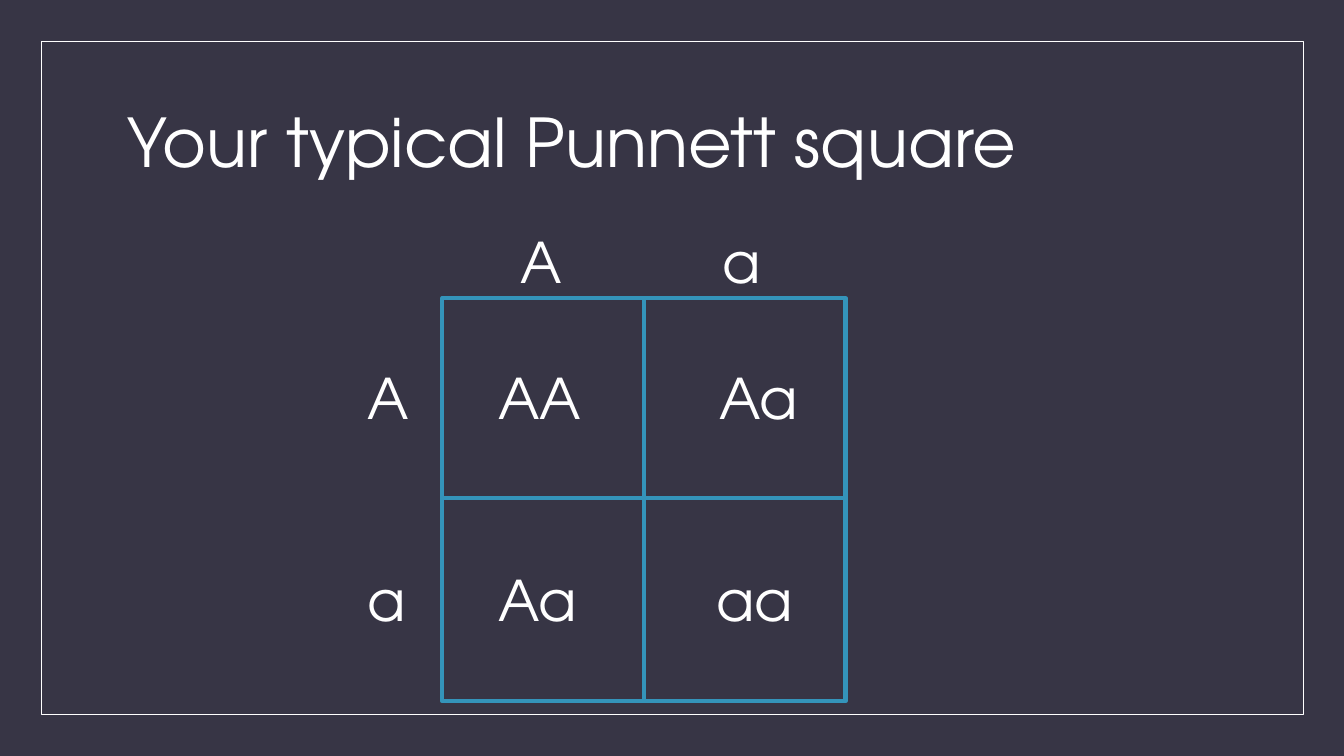
"""Build a slide that shows a Punnett square for two heterozygous parents."""
from dataclasses import dataclass

from lxml import etree
from pptx import Presentation
from pptx.dml.color import RGBColor
from pptx.enum import shapes, text
from pptx.oxml import ns
from pptx.util import Pt


@dataclass(frozen=True)
class Theme:
    background: RGBColor = RGBColor.from_string("373545")
    ink: RGBColor = RGBColor.from_string("FFFFFF")
    grid: RGBColor = RGBColor.from_string("3494BA")
    font: str = "TeX Gyre Adventor"
    title_size: int = 48
    allele_size: int = 40
    frame_width: float = 0.5
    grid_width: float = 3


theme = Theme()


def add_text(lines, left, top, width, height, size=theme.allele_size, inset=7.2,
             tabs=(), gap=0, line_spacing=None, anchor=text.MSO_ANCHOR.TOP):
    shape = slide.shapes.add_textbox(Pt(left), Pt(top), Pt(width), Pt(height))
    frame = shape.text_frame
    frame.word_wrap = True
    frame.vertical_anchor = anchor
    frame.margin_left = Pt(inset)
    for index, line in enumerate(lines):
        paragraph = frame.add_paragraph() if index else frame.paragraphs[0]
        paragraph.space_before = Pt(gap if index else 0)
        paragraph.line_spacing = line_spacing
        if tabs:
            properties = paragraph._p.get_or_add_pPr()
            stops = etree.SubElement(properties, ns.qn("a:tabLst"))
            etree.SubElement(stops, ns.qn("a:tab"), pos=str(Pt(tabs[index])), algn="l")
        run = paragraph.add_run()
        run.text = line
        run.font.name = theme.font
        run.font.size = Pt(size)
        run.font.color.rgb = theme.ink


presentation = Presentation()
presentation.slide_width = Pt(960)
presentation.slide_height = Pt(540)
slide = presentation.slides.add_slide(presentation.slide_layouts[6])
slide.background.fill.solid()
slide.background.fill.fore_color.rgb = theme.background

grid_left, grid_top, grid_side = 316, 213, 288
grid_right, grid_bottom = grid_left + grid_side, grid_top + grid_side
center_x, center_y = grid_left + grid_side / 2, 355.7

outlines = [
    (29.5, 29.5, 901.5, 481, theme.ink, theme.frame_width),
    (grid_left, grid_top, grid_side, grid_side, theme.grid, theme.grid_width),
]
for left, top, width, height, color, line_width in outlines:
    shape = slide.shapes.add_shape(
        shapes.MSO_SHAPE.RECTANGLE, Pt(left), Pt(top), Pt(width), Pt(height))
    shape.shadow.inherit = False
    shape.fill.background()
    shape.line.color.rgb = color
    shape.line.width = Pt(line_width)

dividers = [
    (center_x, grid_top, center_x, grid_bottom),
    (grid_right, center_y, grid_left, center_y),
]
for ends in dividers:
    connector = slide.shapes.add_connector(
        shapes.MSO_CONNECTOR.STRAIGHT, *(Pt(end) for end in ends))
    connector.line.color.rgb = theme.grid
    connector.line.width = Pt(theme.grid_width)
    etree.SubElement(connector._element.spPr, ns.qn("a:effectLst"))

add_text(["Your typical Punnett square"], 84.2, 50.4, 792, 108, size=theme.title_size,
         line_spacing=0.9, anchor=text.MSO_ANCHOR.MIDDLE)

row_top, row_height, row_gap = 256.3, 201, 96
add_text(["AA\tAa", "Aa\taa"], grid_left, row_top, 297, row_height,
         inset=40, tabs=(158, 156), gap=row_gap)
add_text(["A\ta"], 365, 159, 213, 55.5, tabs=(144,))
add_text(["A", "a"], 255.6, row_top, 60, row_height, gap=row_gap)

presentation.save("out.pptx")
